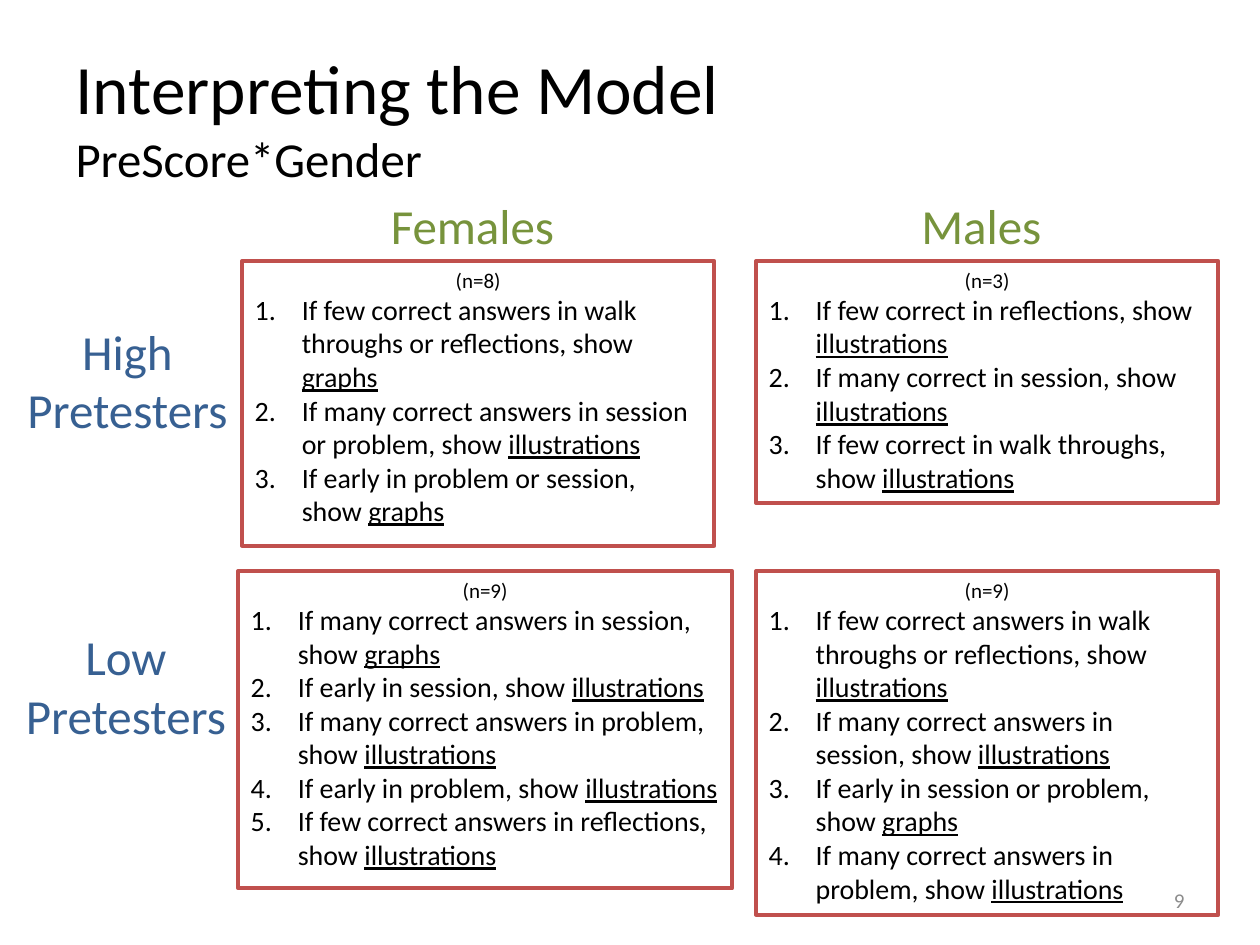
"""Build a slide of tutoring rules by pretest score and gender."""
from dataclasses import dataclass

from lxml import etree
from pptx import Presentation
from pptx.dml.color import RGBColor
from pptx.enum.text import MSO_ANCHOR, MSO_AUTO_SIZE, PP_ALIGN
from pptx.oxml.ns import qn
from pptx.util import Cm, Pt

LEFT, CENTER, RIGHT = PP_ALIGN.LEFT, PP_ALIGN.CENTER, PP_ALIGN.RIGHT
TOP, MIDDLE = MSO_ANCHOR.TOP, MSO_ANCHOR.MIDDLE
NO_AUTOFIT = MSO_AUTO_SIZE.NONE
COMPARISON_LAYOUT = 4


@dataclass(frozen=True)
class Theme:
    """Colours, font and type sizes of the slide."""
    font: str = "Calibri"
    ink: RGBColor = RGBColor(0x00, 0x00, 0x00)
    border: RGBColor = RGBColor(0xC0, 0x50, 0x4D)
    gender: RGBColor = RGBColor(0x77, 0x93, 0x3C)
    pretest: RGBColor = RGBColor(0x37, 0x60, 0x92)
    page: RGBColor = RGBColor(0x8C, 0x8C, 0x8C)
    title: float = 39.6
    subtitle: float = 27.9
    label: float = 28
    rule: float = 16
    small: float = 12
    border_width: float = 2.25


THEME = Theme()
UPPER, LOWER = 5.26, 11.51
MALES_LEFT, MALES_WIDTH = 15.24, 9.32

RULE_BOXES = [
    ((4.88, UPPER, 9.52, 5.74), "(n=8)", [
        ("few correct answers in walk throughs or reflections", "graphs"),
        ("many correct answers in session or problem", "illustrations"),
        ("early in problem or session", "graphs"),
    ]),
    ((4.8, LOWER, 9.96, 6.4), "(n=9)", [
        ("many correct answers in session", "graphs"),
        ("early in session", "illustrations"),
        ("many correct answers in problem", "illustrations"),
        ("early in problem", "illustrations"),
        ("few correct answers in reflections", "illustrations"),
    ]),
    ((MALES_LEFT, UPPER, MALES_WIDTH, 4.88), "(n=3)", [
        ("few correct in reflections", "illustrations"),
        ("many correct in session", "illustrations"),
        ("few correct in walk throughs", "illustrations"),
    ]),
    ((MALES_LEFT, LOWER, MALES_WIDTH, 6.93), "(n=9)", [
        ("few correct answers in walk throughs or reflections", "illustrations"),
        ("many correct answers in session", "illustrations"),
        ("early in session or problem", "graphs"),
        ("many correct answers in problem", "illustrations"),
    ]),
]

LABELS = [
    ("Females", (6.35, 3.81, 6.35, 1.45), THEME.gender),
    ("Males", (17.98, 3.81, 3.61, 1.45), THEME.gender),
    ("High Pretesters", (0.03, 6.35, 5.08, 2.64), THEME.pretest),
    ("Low Pretesters", (0, 12.5, 5.08, 2.64), THEME.pretest),
]


def place(shape, box):
    """Move and size a shape to a box given in centimetres."""
    shape.left, shape.top, shape.width, shape.height = map(Cm, box)


def style(paragraph, size, color, align=LEFT):
    """Set the font, alignment and spacing of a paragraph."""
    font = paragraph.font
    font.name, font.size, font.bold = THEME.font, Pt(size), False
    font.color.rgb = color
    paragraph.alignment = align
    paragraph.space_before = Pt(0)


def set_numbering(paragraph, numbered):
    """Number a paragraph with a hanging indent, or clear its bullet."""
    props = paragraph._p.get_or_add_pPr()
    indent = Cm(0.95) if numbered else 0
    props.set("marL", str(indent))
    props.set("indent", str(-indent))
    if numbered:
        etree.SubElement(props, qn("a:buFont"), typeface="+mj-lt")
        etree.SubElement(props, qn("a:buAutoNum"), type="arabicPeriod")
    else:
        etree.SubElement(props, qn("a:buNone"))


def fill_title(title):
    """Write the two-line title."""
    place(title, (1.27, 0.76, 22.86, 3.18))
    frame = title.text_frame
    frame.auto_size, frame.vertical_anchor = NO_AUTOFIT, MIDDLE
    heading = frame.paragraphs[0]
    style(heading, THEME.title, THEME.ink)
    main_line = heading.add_run()
    main_line.text = "Interpreting the Model"
    main_line.font.size = Pt(THEME.title)
    heading.add_line_break()
    subtitle = heading.add_run()
    subtitle.text = "PreScore*Gender"
    subtitle.font.size = Pt(THEME.subtitle)


def fill_rule_box(body, box, count, rules):
    """Write a group size and its numbered rules in a bordered body."""
    place(body, box)
    body.line.color.rgb = THEME.border
    body.line.width = Pt(THEME.border_width)
    frame = body.text_frame
    frame.auto_size, frame.vertical_anchor = NO_AUTOFIT, TOP
    group_size = frame.paragraphs[0]
    group_size.text = count
    set_numbering(group_size, False)
    style(group_size, THEME.small, THEME.ink, CENTER)
    for condition, medium in rules:
        rule = frame.add_paragraph()
        set_numbering(rule, True)
        style(rule, THEME.rule, THEME.ink)
        rule.add_run().text = f"If {condition}, show "
        shown = rule.add_run()
        shown.text = medium
        shown.font.underline = True


def add_label(slide, text, box, size, color, align=CENTER, anchor=TOP):
    """Add a wrapped one-paragraph text box."""
    label = slide.shapes.add_textbox(*map(Cm, box))
    frame = label.text_frame
    frame.word_wrap, frame.vertical_anchor = True, anchor
    frame.text = text
    style(frame.paragraphs[0], size, color, align)


def main():
    """Build and save the slide."""
    deck = Presentation()
    deck.slide_width, deck.slide_height = Cm(25.4), Cm(19.05)
    slide = deck.slides.add_slide(deck.slide_layouts[COMPARISON_LAYOUT])
    title, *bodies = slide.placeholders
    fill_title(title)
    for body, rule_box in zip(bodies, RULE_BOXES):
        fill_rule_box(body, *rule_box)
    for text, box, color in LABELS:
        add_label(slide, text, box, THEME.label, color)
    add_label(slide, "9", (18.2, 17.65, 5.93, 1.01), THEME.small, THEME.page,
              RIGHT, MIDDLE)
    deck.save("out.pptx")


if __name__ == "__main__":
    main()
